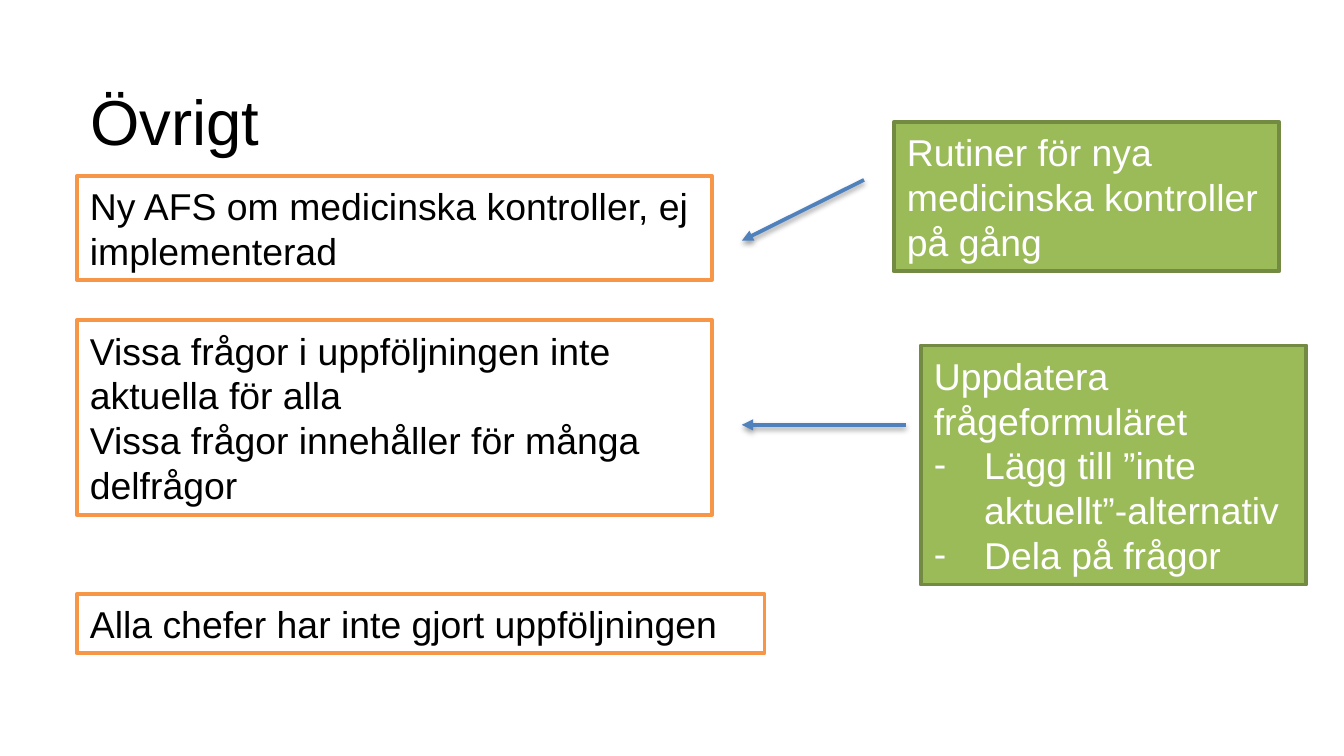
from lxml import etree
from pptx import Presentation
from pptx.dml.color import RGBColor
from pptx.enum.shapes import MSO_CONNECTOR, MSO_SHAPE
from pptx.enum.text import MSO_ANCHOR, PP_ALIGN
from pptx.oxml.ns import qn
from pptx.util import Cm, Pt

RECTANGLE = MSO_SHAPE.RECTANGLE
STRAIGHT = MSO_CONNECTOR.STRAIGHT
MIDDLE = MSO_ANCHOR.MIDDLE
LEFT = PP_ALIGN.LEFT
FONT = "Arial"


def color(hex_code):
    return RGBColor.from_string(hex_code)


def add_text(para, text, size, hex_code):
    para.alignment = LEFT
    span = para.add_run()
    span.text = text
    span.font.name = FONT
    span.font.size = Pt(size)
    span.font.color.rgb = color(hex_code)


deck = Presentation()
deck.slide_width, deck.slide_height = Cm(25.4), Cm(14.29)
page = deck.slides.add_slide(deck.slide_layouts[5])

# Title
title = page.shapes.title
title.left, title.top, title.width, title.height = Cm(1.45), Cm(1.3), Cm(22.73), Cm(1.93)
title.text_frame.vertical_anchor = MIDDLE
add_text(title.text_frame.paragraphs[0], "Övrigt", 34, "000000")

# Findings (white) and actions (green); a leading dash marks a bullet
finding = ("FFFFFF", "F79646", "000000")
action = ("9BBB59", "738A42", "FFFFFF")
boxes = [
    (1.45, 6.05, 12.01, 3.68, finding,
     ["Vissa frågor i uppföljningen inte aktuella för alla",
      "Vissa frågor innehåller för många delfrågor"]),
    (1.45, 3.33, 12.01, 1.96, finding,
     ["Ny AFS om medicinska kontroller, ej implementerad"]),
    (16.89, 2.31, 7.29, 2.82, action,
     ["Rutiner för nya medicinska kontroller på gång"]),
    (17.4, 6.53, 7.29, 4.52, action,
     ["Uppdatera frågeformuläret",
      "-Lägg till ”inte aktuellt”-alternativ",
      "-Dela på frågor"]),
    (1.45, 11.23, 13, 1.12, finding,
     ["Alla chefer har inte gjort uppföljningen"]),
]
for left, top, width, height, (fill, line, ink), lines in boxes:
    box = page.shapes.add_shape(RECTANGLE, Cm(left), Cm(top), Cm(width), Cm(height))
    box.shadow.inherit = False
    box.fill.solid()
    box.fill.fore_color.rgb = color(fill)
    box.line.color.rgb = color(line)
    box.line.width = Pt(2)
    frame = box.text_frame
    frame.word_wrap = True
    frame.vertical_anchor = MIDDLE
    for index, text in enumerate(lines):
        para = frame.add_paragraph() if index else frame.paragraphs[0]
        if text.startswith("-"):
            properties = para._p.get_or_add_pPr()
            properties.set("marL", str(Cm(0.95)))
            properties.set("indent", str(-Cm(0.95)))
            etree.SubElement(properties, qn("a:buFont"), typeface=FONT)
            etree.SubElement(properties, qn("a:buChar"), char="-")
        add_text(para, text.removeprefix("-"), 20, ink)

# Arrows from actions to findings, with a soft shadow below
arrow_tip = 14.02
for start_x, start_y, tip_y in [(16.33, 3.4, 4.55), (17.12, 8.03, 8.03)]:
    arrow = page.shapes.add_connector(
        STRAIGHT, Cm(start_x), Cm(start_y), Cm(arrow_tip), Cm(tip_y))
    arrow.line.color.rgb = color("4F81BD")
    arrow.line.width = Pt(2)
    properties = arrow._element.spPr
    etree.SubElement(properties.find(qn("a:ln")), qn("a:tailEnd"), type="triangle")
    effects = etree.SubElement(properties, qn("a:effectLst"))
    shadow = etree.SubElement(
        effects, qn("a:outerShdw"), blurRad=str(Pt(3.1)), dist=str(Pt(1.6)),
        dir="5400000", rotWithShape="0")
    shade = etree.SubElement(shadow, qn("a:srgbClr"), val="000000")
    etree.SubElement(shade, qn("a:alpha"), val="38000")

deck.save("out.pptx")
